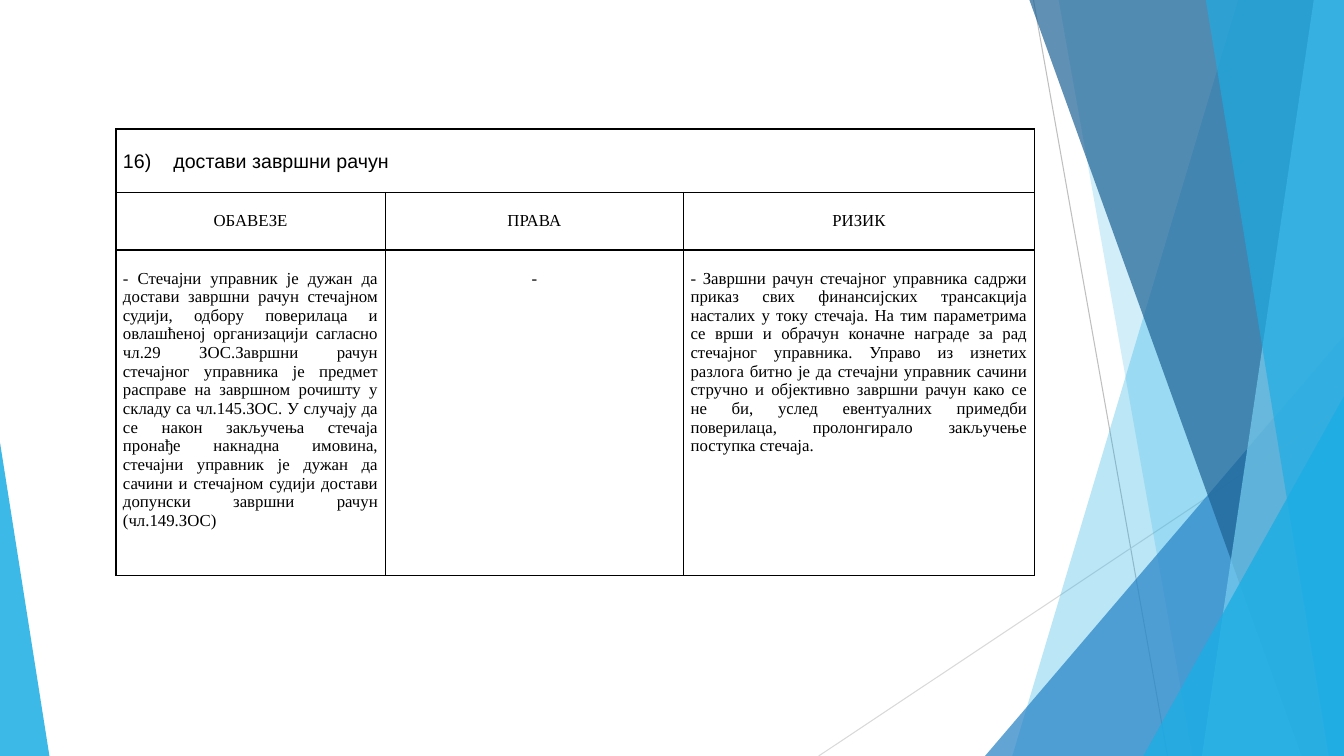
from collections import namedtuple
from dataclasses import dataclass

from lxml.etree import SubElement
from pptx import Presentation
from pptx.dml.color import RGBColor
from pptx.enum.shapes import MSO_CONNECTOR, MSO_SHAPE
from pptx.enum.text import PP_ALIGN as Align
from pptx.oxml import parse_xml
from pptx.oxml.ns import nsdecls, qn
from pptx.util import Inches, Pt

Box = namedtuple("Box", "left top width height")


@dataclass(frozen=True)
class Theme:
    sky: str = "1CADE4"
    pale_sky: str = "77CEEF"
    blue: str = "2683C6"
    navy: str = "1D6294"
    dark_gray: str = "BFBFBF"
    light_gray: str = "D9D9D9"
    ink: str = "000000"
    heading_font: str = "Arial"
    body_font: str = "Times New Roman"
    heading_size: int = 14
    body_size: int = 12


THEME = Theme()

HEADING = "достави завршни рачун"
COLUMN_HEADS = ["ОБАВЕЗЕ", "ПРАВА", "РИЗИК"]
DUTIES = (
    "- Стечајни управник је дужан да достави завршни рачун стечајном судији, "
    "одбору поверилаца и овлашћеној организацији сагласно чл.29 ЗОС.Завршни рачун "
    "стечајног управника је предмет расправе на завршном рочишту у складу са "
    "чл.145.ЗОС. У случају да се након закључења стечаја пронађе накнадна имовина, "
    "стечајни управник је дужан да сачини и стечајном судији достави допунски "
    "завршни рачун (чл.149.ЗОС)"
)
RIGHTS = "-"
RISK = (
    "- Завршни рачун стечајног управника садржи приказ свих финансијских "
    "трансакција насталих у току стечаја. На тим параметрима се врши и обрачун "
    "коначне награде за рад стечајног управника. Управо из изнетих разлога битно је "
    "да стечајни управник сачини стручно и објективно завршни рачун како се не би, "
    "услед евентуалних примедби поверилаца, пролонгирало закључење поступка стечаја."
)


def paint(shape, color, opacity):
    """Fill with a see-through colour, without outline or shadow."""
    shape.shadow.inherit = False
    shape.line.fill.background()
    shape.fill.solid()
    shape.fill.fore_color.rgb = RGBColor.from_string(color)
    srgb = shape.fill._xPr.find(f".//{qn('a:srgbClr')}")
    SubElement(srgb, qn("a:alpha"), val=str(opacity * 1000))


def add_ray(slide, start, end, color):
    ray = slide.shapes.add_connector(
        MSO_CONNECTOR.STRAIGHT, *(Inches(v) for v in (*start, *end)))
    ray.line.color.rgb = RGBColor.from_string(color)
    ray.line.width = Pt(0.75)
    SubElement(ray._element.spPr, qn("a:effectLst"))


def add_band(slide, box, top_inset, bottom_inset, color, opacity):
    """Band along the right side of box; insets are measured from that side."""
    right, bottom = box.left + box.width, box.top + box.height
    corners = [(right - top_inset, box.top), (right, box.top),
               (right, bottom), (right - bottom_inset, bottom)]
    points = [(Inches(x), Inches(y)) for x, y in corners]
    builder = slide.shapes.build_freeform(*points[0])
    builder.add_line_segments(points[1:], close=True)
    paint(builder.convert_to_shape(), color, opacity)


def add_corner(slide, box, width, height, color, opacity, on_right=True):
    """Right-angled triangle in a bottom corner of box."""
    left = box.left + box.width - width if on_right else box.left
    top = box.top + box.height - height
    corner = slide.shapes.add_shape(
        MSO_SHAPE.ISOSCELES_TRIANGLE,
        *(Inches(v) for v in (left, top, width, height)))
    corner.adjustments[0] = 1 if on_right else 0
    paint(corner, color, opacity)


def add_facets(slide, box):
    right, bottom = box.left + box.width, box.top + box.height
    add_ray(slide, (right - 3.08, box.top), (right - 1.75, bottom), THEME.dark_gray)
    add_ray(slide, (right, box.top + 4.03), (right - 5.21, bottom), THEME.light_gray)
    facets = [
        (add_band, 1.05, 3.29, THEME.sky, 30),
        (add_band, 2.83, 1.5, THEME.sky, 20),
        (add_corner, 3.56, 4.17, THEME.blue, 72),
        (add_band, 3.12, 0.42, THEME.navy, 70),
        (add_band, 0.3, 1.41, THEME.pale_sky, 70),
        (add_band, 1.37, 0.15, THEME.sky, 65),
        (add_corner, 1.99, 3.57, THEME.sky, 80),
    ]
    for add_facet, *details in facets:
        add_facet(slide, box, *details)
    add_corner(slide, box, 0.49, 3.11, THEME.sky, 85, on_right=False)


def add_borders(cell):
    props = cell._tc.get_or_add_tcPr()
    for place, side in enumerate("LRTB"):
        props.insert(place, parse_xml(
            f'<a:ln{side} {nsdecls("a")} w="{Pt(1)}"><a:solidFill>'
            f'<a:srgbClr val="{THEME.ink}"/></a:solidFill></a:ln{side}>'))


def fill_cell(cell, text, align, top_margin=0.19,
              font=THEME.body_font, size=THEME.body_size):
    cell.margin_left = cell.margin_right = Inches(0.07)
    cell.margin_top, cell.margin_bottom = Inches(top_margin), 0
    paragraph = cell.text_frame.paragraphs[0]
    paragraph.text = text
    paragraph.alignment = align
    paragraph.font.name = font
    paragraph.font.size = Pt(size)
    paragraph.font.color.rgb = RGBColor.from_string(THEME.ink)


def number_paragraph(paragraph, start):
    props = paragraph._p.get_or_add_pPr()
    props.set("marL", str(Inches(0.5)))
    props.set("indent", str(-Inches(0.5)))
    numbering = parse_xml(
        f'<a:buAutoNum {nsdecls("a")} type="arabicParenR" startAt="{start}"/>')
    props.insert(0, numbering)


def add_duties_table(slide, box):
    row_heights, column_widths = [0.63, 0.57, 3.23], [2.67, 2.96, 3.48]
    table = slide.shapes.add_table(3, 3, *(Inches(v) for v in box)).table
    table.first_row = table.horz_banding = False
    for row, height in zip(table.rows, row_heights):
        row.height = Inches(height)
    for column, width in zip(table.columns, column_widths):
        column.width = Inches(width)
    for cell in table.iter_cells():
        cell.fill.background()
        add_borders(cell)

    heading = table.cell(0, 0)
    heading.merge(table.cell(0, 2))
    fill_cell(heading, HEADING, Align.LEFT, 0.22,
              THEME.heading_font, THEME.heading_size)
    number_paragraph(heading.text_frame.paragraphs[0], 16)
    for column, head in enumerate(COLUMN_HEADS):
        fill_cell(table.cell(1, column), head, Align.CENTER)
    details = [(DUTIES, Align.JUSTIFY), (RIGHTS, Align.CENTER), (RISK, Align.JUSTIFY)]
    for column, (text, align) in enumerate(details):
        fill_cell(table.cell(2, column), text, align)


def main():
    deck = Presentation()
    deck.slide_width, deck.slide_height = Inches(13.33), Inches(7.5)
    slide = deck.slides.add_slide(deck.slide_layouts[6])
    add_facets(slide, Box(0, 0, 13.33, 7.5))
    add_duties_table(slide, Box(1.15, 1.28, 9.11, 4.43))
    deck.save("out.pptx")


if __name__ == "__main__":
    main()
